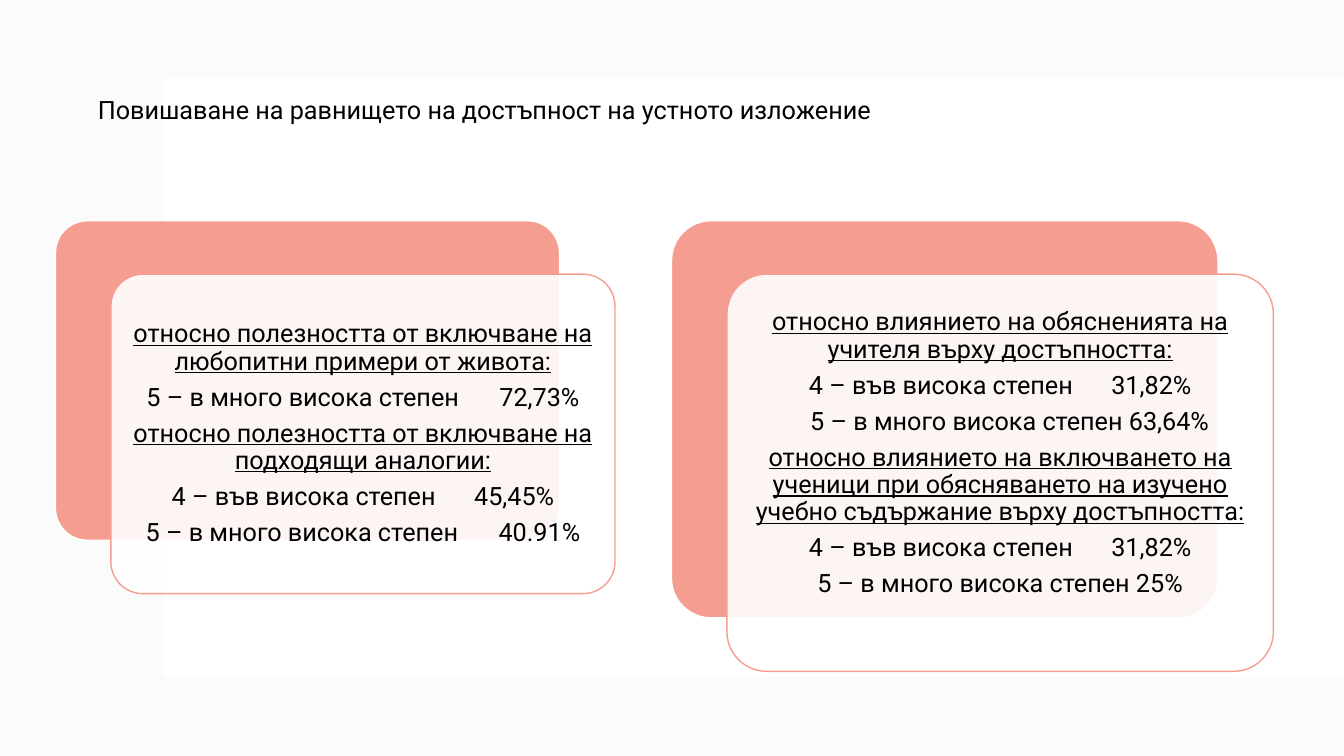
from lxml.etree import SubElement
from pptx import Presentation
from pptx.dml.color import RGBColor
from pptx.enum.shapes import MSO_SHAPE as Shape
from pptx.enum.text import MSO_ANCHOR as Anchor, MSO_AUTO_SIZE as AutoSize, PP_ALIGN as Align
from pptx.oxml.ns import qn
from pptx.util import Inches, Pt

# Content
TITLE = "Повишаване на равнището на достъпност на устното изложение"

# Each line: text, heading or not, tab stop and left indent in inches
CARDS = [
    {
        "left": 0.55, "size": (5, 3.17), "margin": (0.1, 0.09), "bottom_inset": 0.07,
        "lines": [
            ("относно полезността от включване на любопитни примери от живота:", True, None, 0),
            ("5 – в много висока степен\t72,73%", False, 3.5, 0),
            ("относно полезността от включване на подходящи аналогии:", True, None, 0),
            ("4 – във висока степен\t45,45%", False, 2.93, 0),
            ("5 – в много висока степен\t40.91%", False, 3.5, 0),
        ],
    },
    {
        "left": 6.66, "size": (5.42, 3.94), "margin": (0.12, 0.11), "bottom_inset": 0.45,
        "lines": [
            ("относно влиянието на обясненията на учителя върху достъпността:", True, None, 0),
            ("4 – във висока степен\t31,82%", False, 2.93, 0),
            ("5 – в много висока степен 63,64%", False, None, 0.19),
            ("относно влиянието на включването на ученици при обясняването "
             "на изучено учебно съдържание върху достъпността:", True, None, 0),
            ("4 – във висока степен\t31,82%", False, 2.93, 0),
            ("5 – в много висока степен 25%", False, None, 0),
        ],
    },
]

THEME = {
    "font": "Roboto",
    "size": Pt(18),
    "text": RGBColor.from_string("000000"),
    "white": RGBColor.from_string("FFFFFF"),
    "backdrop": RGBColor.from_string("F4F4F4"),
    "coral": RGBColor.from_string("F49D90"),
}
CARD_TOP = 2.19
CARD_OFFSET = (0.55, 0.53)
INSET = 0.07


def add_panel(slide, kind, box, fill, line=None, opacity=None):
    shape = slide.shapes.add_shape(kind, *map(Inches, box))
    shape.shadow.inherit = False
    shape.fill.solid()
    shape.fill.fore_color.rgb = THEME[fill]
    if opacity is not None:
        color = shape._element.spPr.find(qn("a:solidFill"))[0]
        SubElement(color, qn("a:alpha"), val=str(opacity * 1000))
    if line is None:
        shape.line.fill.background()
    else:
        shape.line.color.rgb = THEME[line]
        shape.line.width = Pt(1)
    if kind == Shape.ROUNDED_RECTANGLE:
        shape.adjustments[0] = 0.1


def place_text(slide, placeholder, box, insets):
    """Move a placeholder to the front and set its frame."""
    slide.shapes._spTree.append(placeholder._element)
    placeholder.left, placeholder.top, placeholder.width, placeholder.height = map(Inches, box)
    frame = placeholder.text_frame
    frame.word_wrap = True
    frame.auto_size = AutoSize.NONE
    frame.vertical_anchor = Anchor.MIDDLE
    (frame.margin_left, frame.margin_top,
     frame.margin_right, frame.margin_bottom) = map(Inches, insets)
    return frame


def add_text(paragraph, text, underline=False):
    run = paragraph.add_run()
    run.text = text
    run.font.name = THEME["font"]
    run.font.size = THEME["size"]
    run.font.color.rgb = THEME["text"]
    run.font.underline = underline


def add_line(paragraph, text, heading, tab, indent):
    paragraph.alignment = Align.CENTER
    paragraph.line_spacing = 0.9
    paragraph.space_before = Pt(0)
    paragraph.space_after = Pt(6.3)
    properties = paragraph._p.get_or_add_pPr()
    properties.set("marL", str(Inches(indent)))
    properties.set("indent", "0")
    SubElement(properties, qn("a:buNone"))
    if tab is not None:
        tabs = SubElement(properties, qn("a:tabLst"))
        SubElement(tabs, qn("a:tab"), pos=str(Inches(tab)), algn="l")
    add_text(paragraph, text, heading)


def add_card(slide, placeholder, card):
    left, (width, height) = card["left"], card["size"]
    front_left, front_top = left + CARD_OFFSET[0], CARD_TOP + CARD_OFFSET[1]
    add_panel(slide, Shape.ROUNDED_RECTANGLE, (left, CARD_TOP, width, height), "coral", "white")
    add_panel(slide, Shape.ROUNDED_RECTANGLE, (front_left, front_top, width, height),
              "white", "coral", opacity=90)

    # Text inside the front card
    margin_x, margin_y = card["margin"]
    box = (front_left + margin_x, front_top + margin_y,
           width - 2 * margin_x, height - 2 * margin_y)
    frame = place_text(slide, placeholder, box, (INSET, INSET, INSET, card["bottom_inset"]))
    for index, line in enumerate(card["lines"]):
        paragraph = frame.add_paragraph() if index else frame.paragraphs[0]
        add_line(paragraph, *line)


def main():
    presentation = Presentation()
    presentation.slide_width, presentation.slide_height = Inches(13.33), Inches(7.5)
    slide = presentation.slides.add_slide(presentation.slide_layouts.get_by_name("Two Content"))
    title, *bodies = list(slide.placeholders)

    # Background
    add_panel(slide, Shape.RECTANGLE, (0, 0, 13.33, 7.5), "backdrop", opacity=35)
    add_panel(slide, Shape.RECTANGLE, (1.62, 0.78, 11.71, 5.93), "white")

    # Cards
    for body, card in zip(bodies, CARDS):
        add_card(slide, body, card)

    # Title
    frame = place_text(slide, title, (0.87, 0.89, 11.6, 0.4), (0.1, 0.05, 0.1, 0.05))
    frame.paragraphs[0].alignment = Align.LEFT
    add_text(frame.paragraphs[0], TITLE)

    presentation.save("out.pptx")


if __name__ == "__main__":
    main()
